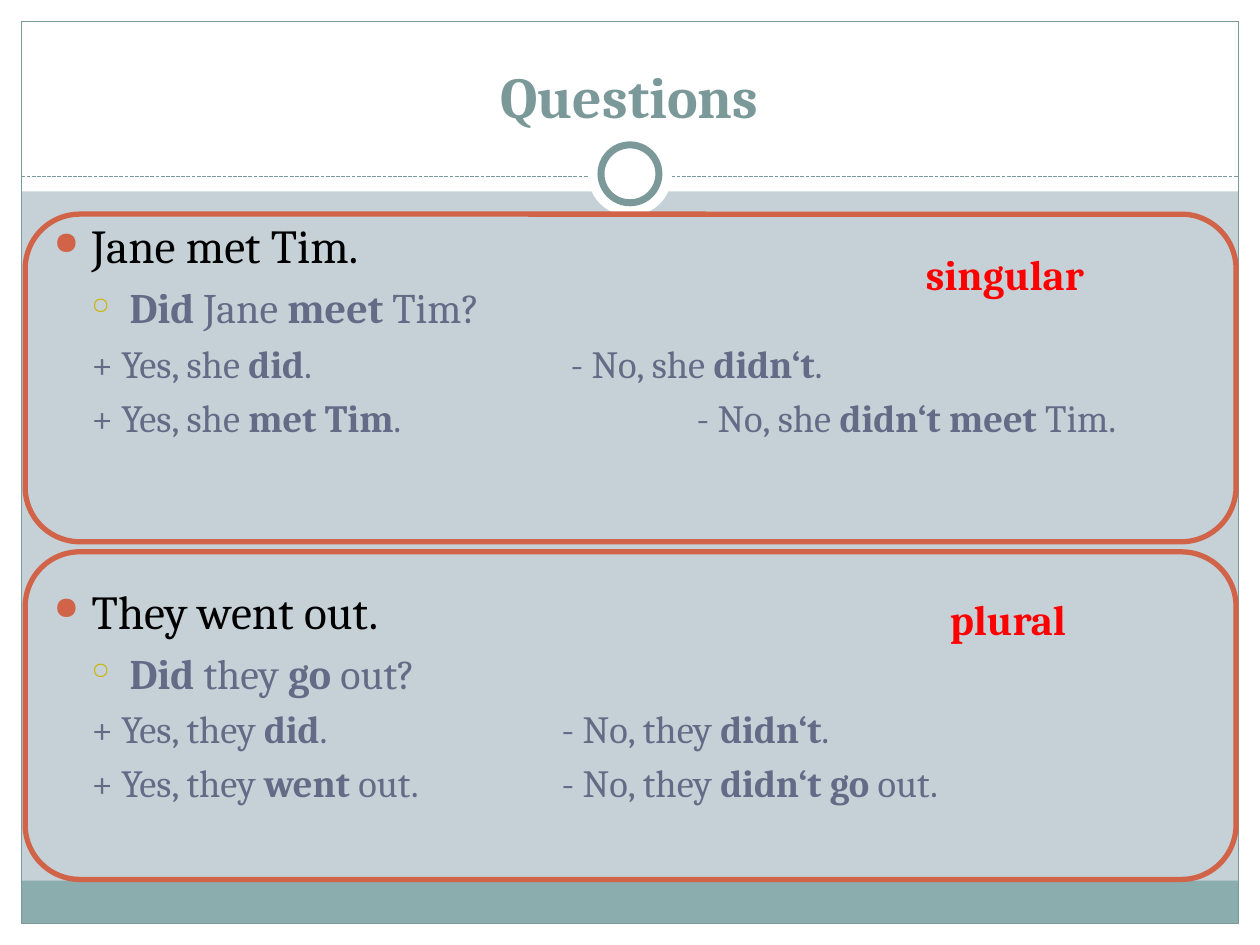
from lxml.etree import SubElement
from pptx import Presentation
from pptx.dml.color import RGBColor
from pptx.enum.dml import MSO_LINE
from pptx.enum.shapes import MSO_CONNECTOR, MSO_SHAPE
from pptx.enum.text import MSO_ANCHOR, PP_ALIGN
from pptx.oxml.ns import qn
from pptx.util import Inches, Pt

COLORS = {
    "background": "C5D1D7", "white": "FFFFFF", "teal": "7C999A",
    "footer": "8CADAE", "coral": "D16349", "gold": "CCB400",
    "black": "000000", "slate": "646B86", "red": "FF0000",
}
FONT = "Cambria"

# Asterisks enclose bold words; each negative answer has its own left margin
EXAMPLES = [
    ("singular", 7.25, 1.92, 1.64, "Jane met Tim.", "*Did* Jane *meet* Tim?",
     ["+ Yes, she *did*.", "+ Yes, she *met Tim*."],
     [("- No, she *didn‘t*.", 4.1), ("- No, she *didn‘t meet* Tim.", 5.1)]),
    ("plural", 7.44, 4.66, 1.26, "They went out.", "*Did* they *go* out?",
     ["+ Yes, they *did*.", "+ Yes, they *went* out."],
     [("- No, they *didn‘t*.", 4.03), ("- No, they *didn‘t go* out.", 4.03)]),
]


def rgb(name):
    return RGBColor.from_string(COLORS[name])


def add_box(slide, kind, left, top, width, height, fill=None, line=None, weight=0.75):
    box = slide.shapes.add_shape(
        kind, Inches(left), Inches(top), Inches(width), Inches(height))
    box.shadow.inherit = False
    if fill:
        box.fill.solid()
        box.fill.fore_color.rgb = rgb(fill)
    else:
        box.fill.background()
    if line:
        box.line.color.rgb = rgb(line)
        box.line.width = Pt(weight)
    else:
        box.line.fill.background()


def add_text_frame(slide, left, top, width, height, wrap=True):
    frame = slide.shapes.add_textbox(
        Inches(left), Inches(top), Inches(width), Inches(height)).text_frame
    frame.word_wrap = wrap
    return frame


def write(paragraph, marked_text, size, color):
    """Write text in which asterisks enclose the bold parts."""
    for index, part in enumerate(marked_text.split("*")):
        if part:
            run = paragraph.add_run()
            run.text = part
            run.font.name = FONT
            run.font.size = Pt(size)
            run.font.bold = index % 2 == 1
            run.font.color.rgb = rgb(color)


def format_paragraph(paragraph, margin, indent=0, bullet=None):
    props = paragraph._p.get_or_add_pPr()
    props.set("marL", str(Inches(margin)))
    props.set("indent", str(Inches(indent)))
    spacing = SubElement(props, qn("a:spcBef"))
    SubElement(spacing, qn("a:spcPct"), val="20000")
    if bullet:
        char, color, percent = bullet
        bullet_color = SubElement(props, qn("a:buClr"))
        SubElement(bullet_color, qn("a:srgbClr"), val=COLORS[color])
        SubElement(props, qn("a:buSzPct"), val=str(percent * 1000))
        SubElement(props, qn("a:buChar"), char=char)
    else:
        SubElement(props, qn("a:buNone"))


def add_frame(slide, width, height, margin):
    """White margins, header and footer bands, divider and ring."""
    inner_width = width - 2 * margin
    for band in [(0, height - margin, width, margin), (0, 0, width, 1.52),
                 (0, 0, margin, height), (width - margin, 0, margin, height)]:
        add_box(slide, MSO_SHAPE.RECTANGLE, *band, fill="white")
    add_box(slide, MSO_SHAPE.RECTANGLE, margin, 6.99, inner_width, 0.34, fill="footer")
    add_box(slide, MSO_SHAPE.RECTANGLE, margin, margin, inner_width,
            height - 2 * margin, line="teal")

    divider = slide.shapes.add_connector(
        MSO_CONNECTOR.STRAIGHT, Inches(margin), Inches(1.4),
        Inches(width - margin), Inches(1.4))
    divider.line.color.rgb = rgb("teal")
    divider.line.width = Pt(0.75)
    divider.line.dash_style = MSO_LINE.SQUARE_DOT
    SubElement(divider._element.spPr, qn("a:effectLst"))

    for diameter, line in [(0.67, None), (0.46, "teal")]:
        add_box(slide, MSO_SHAPE.OVAL, (width - diameter) / 2, 1.38 - diameter / 2,
                diameter, diameter, fill="white", line=line, weight=4)


def add_title(slide, left, top, width, height):
    frame = add_text_frame(slide, left, top, width, height)
    frame.vertical_anchor = MSO_ANCHOR.BOTTOM
    heading = frame.paragraphs[0]
    heading.alignment = PP_ALIGN.CENTER
    write(heading, "*Questions*", 33, "teal")


def add_example(slide, left, top, width, height, statement, question,
                positives, negatives):
    """A statement and its question, with positive and negative answers."""
    frame = add_text_frame(slide, left, top, width, height)
    first = frame.paragraphs[0]
    format_paragraph(first, 0.3, -0.3, ("●", "coral", 67))
    write(first, statement, 27, "black")
    second = frame.add_paragraph()
    format_paragraph(second, 0.6, -0.3, ("○", "gold", 55))
    write(second, question, 24, "slate")
    for answer in positives:
        line = frame.add_paragraph()
        format_paragraph(line, 0.3)
        write(line, answer, 22, "slate")

    # Negative answers, level with the positive ones
    offset = 0.98
    column = add_text_frame(slide, left, top + offset, width, height - offset)
    for index, (answer, margin) in enumerate(negatives):
        line = column.add_paragraph() if index else column.paragraphs[0]
        format_paragraph(line, margin)
        write(line, answer, 22, "slate")


def add_label(slide, left, top, width, height, label):
    frame = add_text_frame(slide, left, top, width, height, wrap=False)
    write(frame.paragraphs[0], f"*{label}*", 24, "red")


def main():
    deck = Presentation()
    deck.slide_width, deck.slide_height = Inches(10), Inches(7.5)
    slide = deck.slides.add_slide(deck.slide_layouts[6])
    slide.background.fill.solid()
    slide.background.fill.fore_color.rgb = rgb("background")

    add_frame(slide, 10, 7.5, 0.17)
    add_title(slide, 0.33, 0.25, 9.33, 0.83)
    for row, (label, left, top, width, *content) in enumerate(EXAMPLES):
        add_example(slide, 0.33, 1.67 + 2.9 * row, 9.3, 2.1, *content)
        add_label(slide, left, top, width, 0.5, label)
        add_box(slide, MSO_SHAPE.ROUNDED_RECTANGLE, 0.2, 1.7 + 2.68 * row,
                9.61, 2.6, line="coral", weight=3)
    deck.save("out.pptx")


if __name__ == "__main__":
    main()
